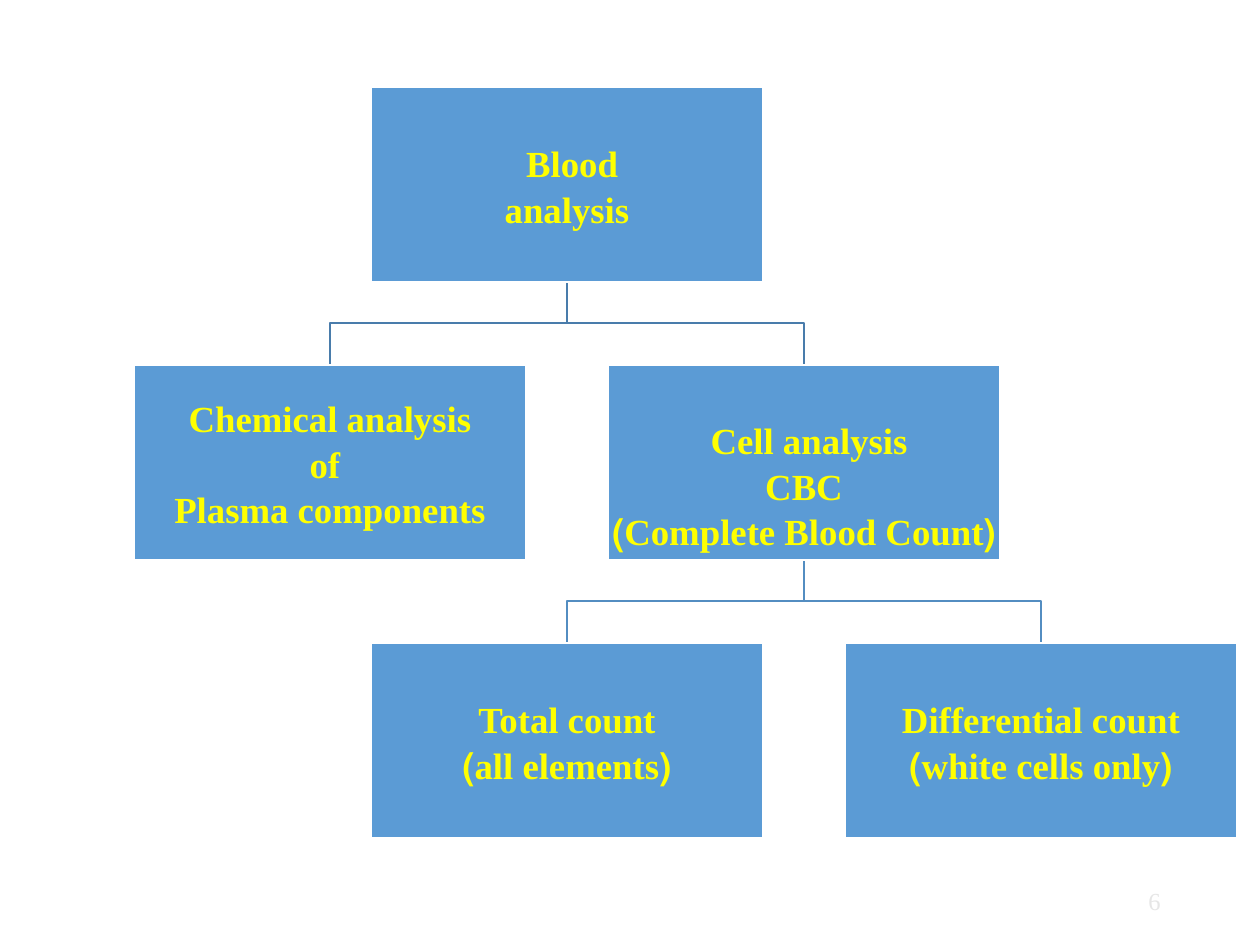
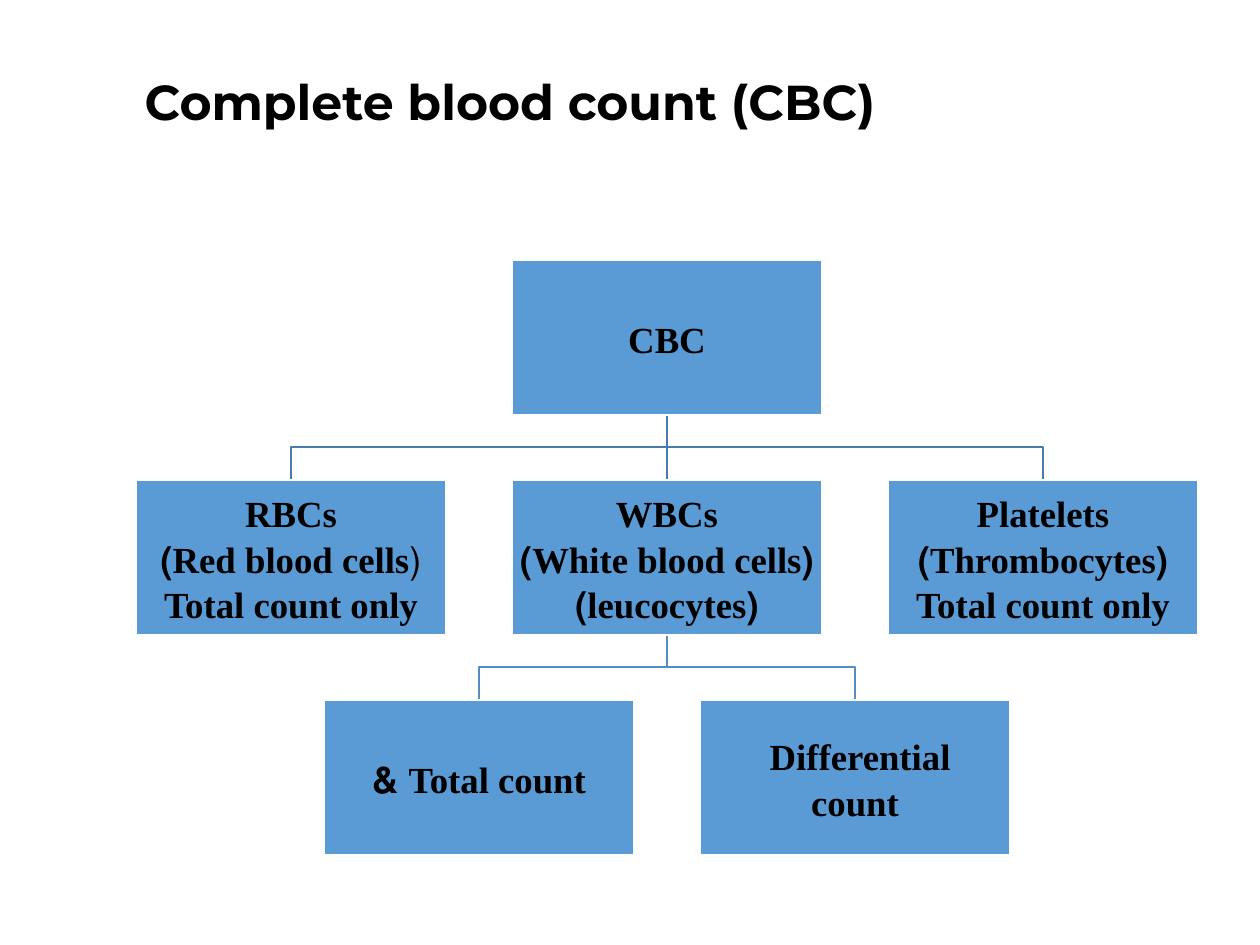
from lxml.etree import SubElement
from pptx import Presentation
from pptx.dml.color import RGBColor
from pptx.enum.shapes import MSO_CONNECTOR, MSO_SHAPE
from pptx.enum.text import MSO_ANCHOR as Anchor, MSO_AUTO_SIZE as AutoSize, PP_ALIGN as Align
from pptx.oxml.ns import qn
from pptx.util import Emu, Inches, Pt

EMU_PER_PX = 914400 / 126
BODY_FONT = "Times New Roman"
TITLE_FONT = "Montserrat"
BOX_BLUE = RGBColor(0x5B, 0x9B, 0xD5)
WHITE = RGBColor(0xFF, 0xFF, 0xFF)
BLACK = RGBColor(0, 0, 0)
YELLOW = RGBColor(0xFF, 0xFF, 0)
PALE_GRAY = RGBColor(0xE6, 0xE6, 0xE6)
UPPER_LINK = RGBColor(0x49, 0x7C, 0xAB)
LOWER_LINK = RGBColor(0x53, 0x8D, 0xC1)
TITLE_ONLY, BLANK = 5, 6


def px(*lengths):
    return [Emu(round(length * EMU_PER_PX)) for length in lengths]


def format_run(run, size, color, bold=True, name=BODY_FONT):
    run.font.name, run.font.size, run.font.bold = name, Pt(size), bold
    run.font.color.rgb = color


class ChartBuilder:
    """Draws hierarchies on a grid of half-pitch columns and equal levels."""

    def __init__(self, presentation):
        self.presentation = presentation

    def new_slide(self, layout):
        self.slide = self.presentation.slides.add_slide(self.presentation.slide_layouts[layout])

    def title(self, text):
        title = self.slide.shapes.title
        title.left, title.top, title.width, title.height = px(132, 26, 1071, 158)
        frame = title.text_frame
        frame.text = text
        frame.auto_size, frame.vertical_anchor = AutoSize.NONE, Anchor.MIDDLE
        paragraph = frame.paragraphs[0]
        paragraph.alignment, paragraph.line_spacing = Align.LEFT, 0.9
        format_run(paragraph.runs[0], 28, BLACK, name=TITLE_FONT)

    def page_number(self, text):
        frame = self.slide.shapes.add_textbox(*px(890, 876, 283, 50)).text_frame
        frame.word_wrap, frame.vertical_anchor = True, Anchor.MIDDLE
        frame.text = text
        frame.paragraphs[0].alignment = Align.RIGHT
        format_run(frame.paragraphs[0].runs[0], 14, PALE_GRAY, bold=False)

    def grid(self, first_center, half_pitch, top, level_pitch, width, height, text_color):
        self.first_center, self.half_pitch = first_center, half_pitch
        self.top, self.level_pitch = top, level_pitch
        self.width, self.height = width, height
        self.text_color = text_color

    def center(self, column):
        return self.first_center + column * self.half_pitch

    def link(self, level, parent, child, color):
        """Join a parent column on a level to a child column one level down."""
        parent_x, child_x = self.center(parent), self.center(child)
        child_y = self.top + (level + 1) * self.level_pitch
        parent_y = child_y - self.level_pitch + self.height
        middle_y = (parent_y + child_y) // 2
        shapes = self.slide.shapes
        if parent == child:
            link = shapes.add_connector(MSO_CONNECTOR.STRAIGHT,
                                        *px(parent_x, parent_y, child_x, child_y))
            SubElement(link.line._get_or_add_ln().getparent(), qn("a:effectLst"))
        else:
            builder = shapes.build_freeform(parent_x, parent_y, scale=EMU_PER_PX)
            builder.add_line_segments(
                [(parent_x, middle_y), (child_x, middle_y), (child_x, child_y)], close=False)
            link = builder.convert_to_shape()
            link.fill.background()
            link.shadow.inherit = False
        link.line.color.rgb, link.line.width = color, Pt(1)

    def box(self, level, column, *lines, top_inset=1):
        """Add a box; a line given as a pair starts with a part that is not bold."""
        shape = self.slide.shapes.add_shape(MSO_SHAPE.RECTANGLE, *px(
            self.center(column) - self.width // 2, self.top + level * self.level_pitch,
            self.width, self.height))
        shape.shadow.inherit = False
        shape.fill.solid()
        shape.fill.fore_color.rgb = BOX_BLUE
        shape.line.color.rgb, shape.line.width = WHITE, Pt(1)
        frame = shape.text_frame
        frame.word_wrap, frame.vertical_anchor = True, Anchor.MIDDLE
        frame.margin_left, frame.margin_right, frame.margin_bottom, frame.margin_top = px(
            1, 1, 1, top_inset)
        for index, line in enumerate(lines):
            paragraph = frame.add_paragraph() if index else frame.paragraphs[0]
            paragraph.alignment, paragraph.line_spacing = Align.CENTER, 1.04
            paragraph._p.get_or_add_pPr().set("rtl", "1")
            plain, bold = line if isinstance(line, tuple) else ("", line)
            for text, is_bold in ((plain, False), (bold, True)):
                if text:
                    run = paragraph.add_run()
                    run.text = text
                    format_run(run, 21, self.text_color, is_bold)


def blood_analysis(chart):
    chart.new_slide(BLANK)
    chart.grid(330, 237, 87, 278, 392, 195, YELLOW)
    for child in (3, 1):
        chart.link(1, 2, child, LOWER_LINK)
    for child in (2, 0):
        chart.link(0, 1, child, UPPER_LINK)
    chart.box(0, 1, "Blood ", "analysis")
    chart.box(1, 0, "Chemical analysis", " of", "Plasma components")
    chart.box(1, 2, "Cell analysis ", "CBC", "(Complete Blood Count)", top_inset=45)
    chart.box(2, 1, "Total count", "(all elements)")
    chart.box(2, 3, "Differential count", "(white cells only)")
    chart.page_number("6")


def complete_blood_count(chart):
    chart.new_slide(TITLE_ONLY)
    chart.title("Complete blood count (CBC)")
    chart.grid(291, 188, 260, 220, 310, 155, BLACK)
    for child in (4, 2, 0):
        chart.link(0, 2, child, UPPER_LINK)
    for child in (3, 1):
        chart.link(1, 2, child, LOWER_LINK)
    chart.box(0, 2, "CBC")
    chart.box(1, 0, "RBCs", ("(", "Red blood cells)"), "Total count only")
    chart.box(1, 2, "WBCs", "(White blood cells)", "(leucocytes)")
    chart.box(1, 4, "Platelets", "(Thrombocytes)", "Total count only")
    chart.box(2, 1, "Total count &")
    chart.box(2, 3, "Differential ", "count")


def main():
    presentation = Presentation()
    presentation.slide_width, presentation.slide_height = Inches(10), Inches(7.5)
    chart = ChartBuilder(presentation)
    blood_analysis(chart)
    complete_blood_count(chart)
    presentation.save("out.pptx")


if __name__ == "__main__":
    main()
